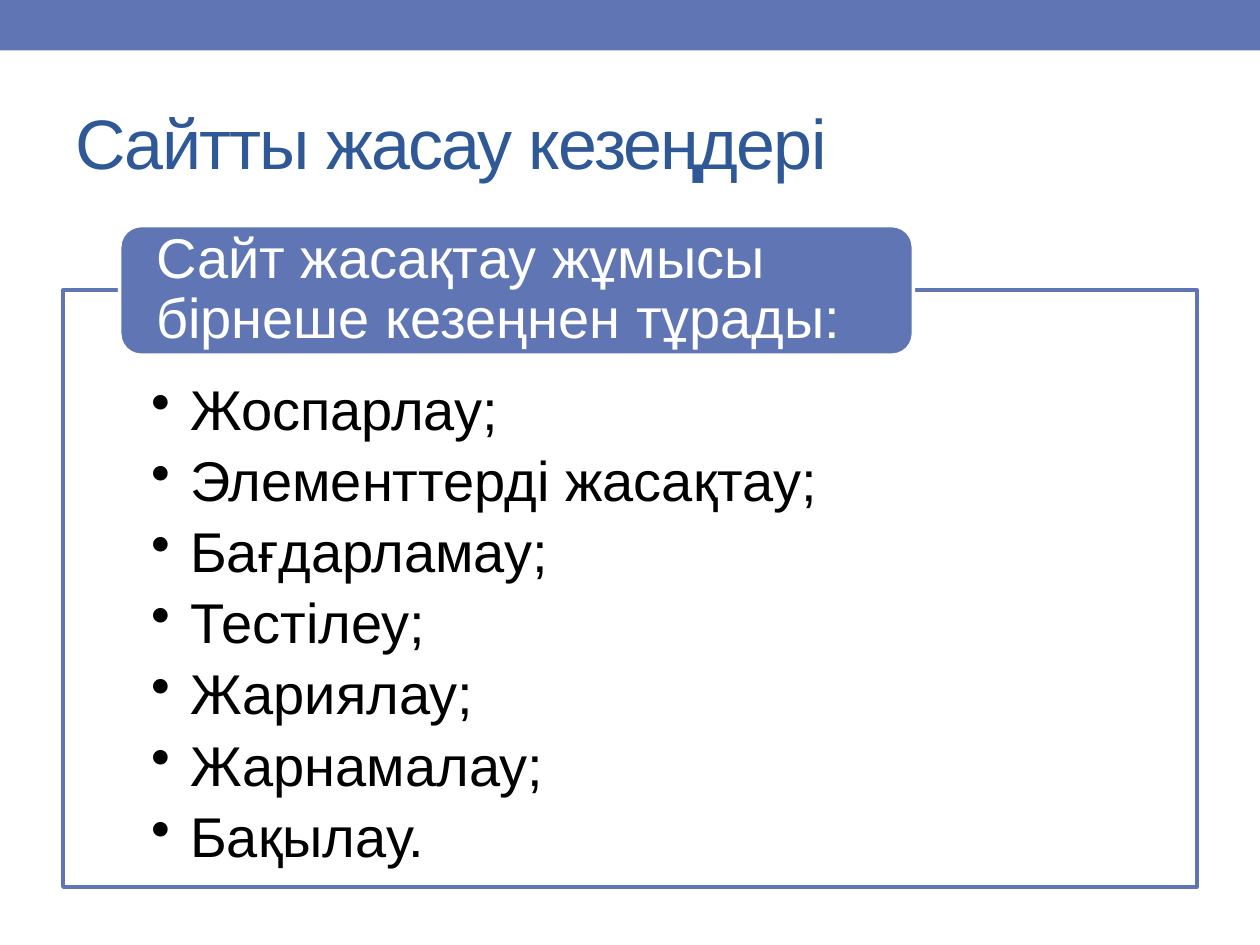
from dataclasses import dataclass
from typing import Optional

import pptx
import pptx.dml.color
import pptx.enum.shapes
import pptx.enum.text
import pptx.oxml
import pptx.oxml.ns
import pptx.util
from pptx.util import Inches

COLORS = {
    "accent": "6076B4",
    "title": "2F5897",
    "white": "FFFFFF",
    "black": "000000",
}
FONT = "Arial"
SHAPES = pptx.enum.shapes.MSO_SHAPE
ANCHORS = pptx.enum.text.MSO_ANCHOR
STAGES = [
    "Жоспарлау;",
    "Элементтерді жасақтау;",
    "Бағдарламау;",
    "Тестілеу;",
    "Жариялау;",
    "Жарнамалау;",
    "Бақылау.",
]


@dataclass
class Box:
    left: float
    top: float
    width: float
    height: float
    kind: pptx.enum.shapes.MSO_SHAPE
    fill: Optional[str] = None
    line: Optional[str] = None
    opacity: int = 100


@dataclass
class TextStyle:
    size: float
    color: str
    insets: tuple[float, float, float, float]
    anchor: pptx.enum.text.MSO_ANCHOR = ANCHORS.MIDDLE
    line_spacing: float = 1.0
    space_after: float = 0
    tracking: float = 0
    bullet_indent: float = 0


def rgb(name: str) -> pptx.dml.color.RGBColor:
    return pptx.dml.color.RGBColor.from_string(COLORS[name])


def draw_box(slide, box: Box):
    shape = slide.shapes.add_shape(
        box.kind, Inches(box.left), Inches(box.top), Inches(box.width), Inches(box.height)
    )
    shape.shadow.inherit = False
    shape.fill.solid()
    shape.fill.fore_color.rgb = rgb(box.fill)
    if box.opacity < 100:
        color = shape._element.spPr.find(".//" + pptx.oxml.ns.qn("a:srgbClr"))
        color.append(pptx.oxml.parse_xml(
            f'<a:alpha {pptx.oxml.ns.nsdecls("a")} val="{box.opacity * 1000}"/>'
        ))
    if box.line:
        shape.line.color.rgb = rgb(box.line)
        shape.line.width = pptx.util.Pt(2.08)
    else:
        shape.line.fill.background()
    return shape


def add_bullet(paragraph, indent: float) -> None:
    properties = paragraph._p.get_or_add_pPr()
    properties.set("marL", str(Inches(indent)))
    properties.set("indent", str(-Inches(indent)))
    properties.append(pptx.oxml.parse_xml(
        f'<a:buChar {pptx.oxml.ns.nsdecls("a")} char="•"/>'
    ))


def write_text(shape, lines: list[str], style: TextStyle) -> None:
    frame = shape.text_frame
    frame.word_wrap = True
    frame.vertical_anchor = style.anchor
    left, top, right, bottom = map(Inches, style.insets)
    frame.margin_left, frame.margin_top = left, top
    frame.margin_right, frame.margin_bottom = right, bottom
    for index, line in enumerate(lines):
        paragraph = frame.add_paragraph() if index else frame.paragraphs[0]
        paragraph.alignment = pptx.enum.text.PP_ALIGN.LEFT
        paragraph.line_spacing = style.line_spacing
        paragraph.space_after = pptx.util.Pt(style.space_after)
        if style.bullet_indent:
            paragraph.level = 1
            add_bullet(paragraph, style.bullet_indent)
        run = paragraph.add_run()
        run.text = line
        run.font.name = FONT
        run.font.size = pptx.util.Pt(style.size)
        run.font.color.rgb = rgb(style.color)
        if style.tracking:
            run._r.get_or_add_rPr().set("spc", str(round(style.tracking * 100)))


def main() -> None:
    presentation = pptx.Presentation()
    presentation.slide_width = Inches(10)
    presentation.slide_height = Inches(7.5)
    slide = presentation.slides.add_slide(presentation.slide_layouts[6])

    draw_box(slide, Box(0, 0, 10, 0.4, SHAPES.RECTANGLE, "accent"))

    title = slide.shapes.add_textbox(Inches(0.5), Inches(0.58), Inches(9), Inches(1.08))
    write_text(
        title,
        ["Сайтты жасау кезеңдері"],
        TextStyle(40, "title", (0.1, 0.05, 0.1, 0.05), tracking=-1),
    )

    stages = draw_box(
        slide, Box(0.5, 2.3, 9, 4.74, SHAPES.RECTANGLE, "white", "accent", opacity=90)
    )
    write_text(
        stages,
        STAGES,
        TextStyle(32, "black", (0.7, 0.73, 0.7, 0.25), ANCHORS.TOP,
                  line_spacing=0.9, space_after=6.1, bullet_indent=0.31),
    )

    heading = draw_box(
        slide, Box(0.95, 1.79, 6.3, 1.03, SHAPES.ROUNDED_RECTANGLE, "accent", "white")
    )
    write_text(
        heading,
        ["Сайт жасақтау жұмысы бірнеше кезеңнен тұрады:"],
        TextStyle(32, "white", (0.24, 0, 0.24, 0), line_spacing=0.9),
    )

    presentation.save("out.pptx")


if __name__ == "__main__":
    main()
